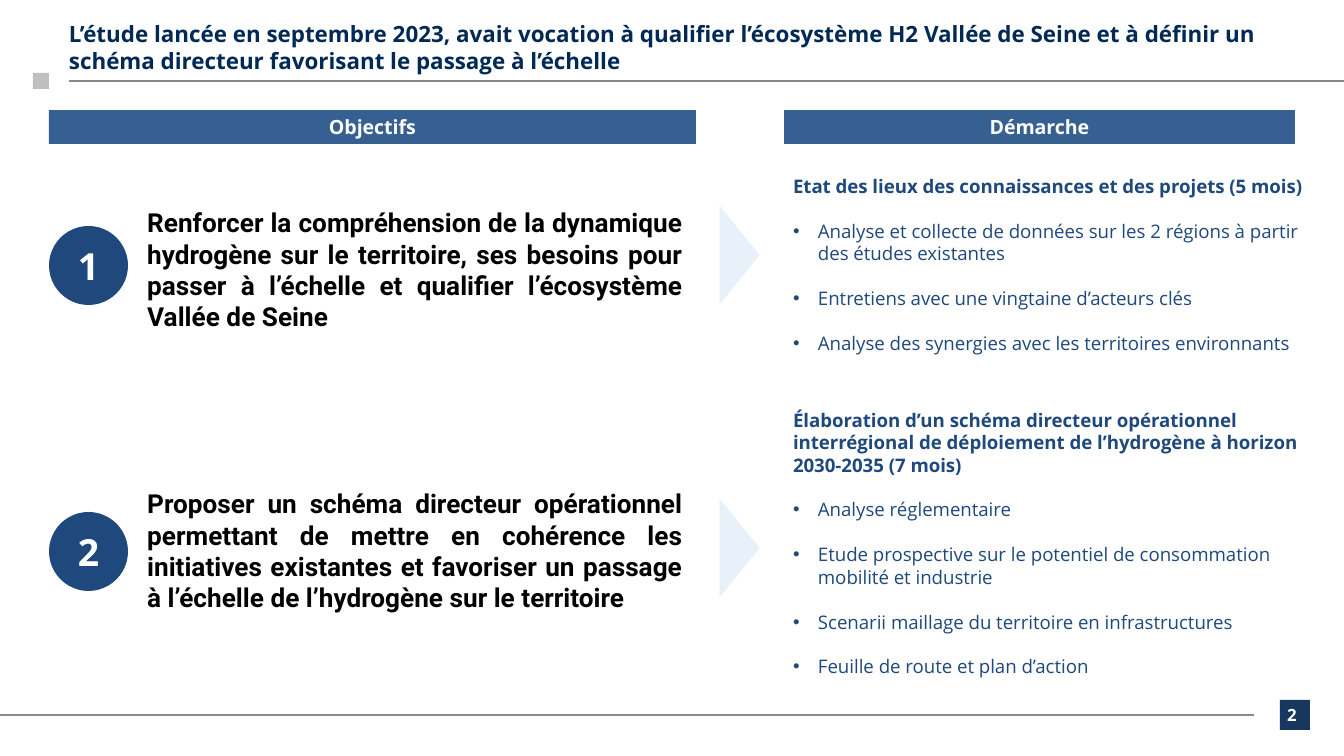
from lxml import etree
from pptx import Presentation
from pptx import util as u
from pptx.dml.color import RGBColor
from pptx.enum import shapes, text
from pptx.oxml.ns import qn

EMU_PER_PX = 914400 / 134.4
NAVY = RGBColor(0x00, 0x29, 0x55)
DARK_BLUE = RGBColor(0x17, 0x37, 0x5E)
BLUE = RGBColor(0x1F, 0x49, 0x7D)
HEADER_BLUE = RGBColor(0x36, 0x60, 0x92)
PALE_BLUE = RGBColor(0xE8, 0xF0, 0xF9)
RULE_GREY = RGBColor(0x88, 0x8A, 0x88)
MARK_GREY = RGBColor(0xBF, 0xBF, 0xBF)
WHITE = RGBColor(0xFF, 0xFF, 0xFF)
BLACK = RGBColor(0x00, 0x00, 0x00)

TITLE = (
    "L’étude lancée en septembre 2023, avait vocation à qualifier l’écosystème H2 "
    "Vallée de Seine et à définir un schéma directeur favorisant le passage à l’échelle"
)
HEADERS = [("Objectifs", 49, 647), ("Démarche", 784, 511)]
GOALS = [
    {
        "number": "1",
        "circle_top": 226,
        "goal_top": 200,
        "arrow_top": 235,
        "steps_box": (793, 168, 511, 195),
        "goal": "Renforcer la compréhension de la dynamique hydrogène sur le territoire, "
                "ses besoins pour passer à l’échelle et qualifier l’écosystème Vallée de Seine",
        "heading": "Etat des lieux des connaissances et des projets (5 mois)",
        "steps": [
            "Analyse et collecte de données sur les 2 régions à partir des études existantes",
            "Entretiens avec une vingtaine d’acteurs clés",
            "Analyse des synergies avec les territoires environnants",
        ],
    },
    {
        "number": "2",
        "circle_top": 512,
        "goal_top": 481,
        "arrow_top": 528,
        "steps_box": (793, 402, 511, 285),
        "goal": "Proposer un schéma directeur opérationnel permettant de mettre en cohérence "
                "les initiatives existantes et favoriser un passage à l’échelle de l’hydrogène "
                "sur le territoire",
        "heading": "Élaboration d’un schéma directeur opérationnel interrégional de "
                   "déploiement de l’hydrogène à horizon 2030-2035 (7 mois)",
        "steps": [
            "Analyse réglementaire",
            "Etude prospective sur le potentiel de consommation mobilité et industrie",
            "Scenarii maillage du territoire en infrastructures",
            "Feuille de route et plan d’action",
        ],
    },
]


def px(length):
    return u.Emu(round(length * EMU_PER_PX))


def set_attributes(target, values):
    for name, value in values.items():
        setattr(target, name, value)


def write(paragraph, words, size, color, bold=True, font="Open Sans", **layout):
    run = paragraph.add_run()
    run.text = words
    set_attributes(run.font, {"name": font, "size": u.Pt(size), "bold": bold})
    run.font.color.rgb = color
    set_attributes(paragraph, layout)


def add_rule(slide, start, end, top):
    rule = slide.shapes.add_connector(
        shapes.MSO_CONNECTOR.STRAIGHT, px(start), px(top), px(end), px(top))
    rule.line.color.rgb = RULE_GREY
    rule.line.width = u.Pt(0.75)
    etree.SubElement(rule._element.spPr, qn("a:effectLst"))


def add_block(slide, kind, box, color, words=None, size=None):
    shape = slide.shapes.add_shape(kind, *map(px, box))
    shape.shadow.inherit = False
    shape.fill.solid()
    shape.fill.fore_color.rgb = color
    shape.line.fill.background()
    if words:
        shape.text_frame.vertical_anchor = text.MSO_ANCHOR.MIDDLE
        write(shape.text_frame.paragraphs[0], words, size, WHITE,
              alignment=text.PP_ALIGN.CENTER)
    return shape


def add_text_frame(slide, box, **layout):
    frame = slide.shapes.add_textbox(*map(px, box)).text_frame
    set_attributes(frame, {"word_wrap": True, **layout})
    return frame


def add_bullet(paragraph):
    properties = paragraph._p.get_or_add_pPr()
    properties.set("marL", str(px(25)))
    properties.set("indent", str(-px(25)))
    color = etree.SubElement(properties, qn("a:buClr"))
    etree.SubElement(color, qn("a:srgbClr"), val=str(BLUE))
    etree.SubElement(properties, qn("a:buFont"), typeface="Arial")
    etree.SubElement(properties, qn("a:buChar"), char="•")


def add_steps(slide, box, heading, steps):
    frame = add_text_frame(slide, box, margin_left=0, margin_right=0,
                           auto_size=text.MSO_AUTO_SIZE.SHAPE_TO_FIT_TEXT)
    write(frame.paragraphs[0], heading, 10, BLUE, space_after=u.Pt(6))
    for step in steps:
        paragraph = frame.add_paragraph()
        add_bullet(paragraph)
        write(paragraph, step, 10, BLUE, bold=False,
              space_before=u.Pt(6), space_after=u.Pt(6))


def add_goal(slide, goal):
    add_block(slide, shapes.MSO_SHAPE.OVAL, (49, goal["circle_top"], 79, 79), BLUE,
              goal["number"], 20)
    frame = add_text_frame(slide, (134, goal["goal_top"], 562, 140),
                           auto_size=text.MSO_AUTO_SIZE.SHAPE_TO_FIT_TEXT)
    write(frame.paragraphs[0], goal["goal"], 14, BLACK, font="Roboto",
          alignment=text.PP_ALIGN.JUSTIFY)
    arrow = add_block(slide, shapes.MSO_SHAPE.ISOSCELES_TRIANGLE,
                      (690, goal["arrow_top"], 99, 40), PALE_BLUE)
    arrow.rotation = 90
    add_steps(slide, goal["steps_box"], goal["heading"], goal["steps"])


def add_title(slide):
    add_rule(slide, 1344, 69, 81)
    add_block(slide, shapes.MSO_SHAPE.RECTANGLE, (33, 73, 16, 16), MARK_GREY)
    frame = add_text_frame(slide, (69, 24, 1253, 47), margin_left=0, margin_right=0,
                           vertical_anchor=text.MSO_ANCHOR.MIDDLE)
    write(frame.paragraphs[0], TITLE, 12, NAVY)


def add_footer(slide):
    add_rule(slide, 1254, 0, 715)
    add_block(slide, shapes.MSO_SHAPE.RECTANGLE, (1280, 700, 30, 30), DARK_BLUE)
    frame = add_text_frame(slide, (1260, 695, 64, 40), margin_left=0, margin_right=0,
                           vertical_anchor=text.MSO_ANCHOR.MIDDLE)
    write(frame.paragraphs[0], "2", 9, WHITE, alignment=text.PP_ALIGN.CENTER)


def main():
    presentation = Presentation()
    set_attributes(presentation, {"slide_width": px(1344), "slide_height": px(756)})
    slide = presentation.slides.add_slide(presentation.slide_layouts[6])
    add_footer(slide)
    add_title(slide)
    for words, left, width in HEADERS:
        add_block(slide, shapes.MSO_SHAPE.RECTANGLE, (left, 110, width, 34),
                  HEADER_BLUE, words, 10.5)
    for goal in GOALS:
        add_goal(slide, goal)
    presentation.save("out.pptx")


if __name__ == "__main__":
    main()
